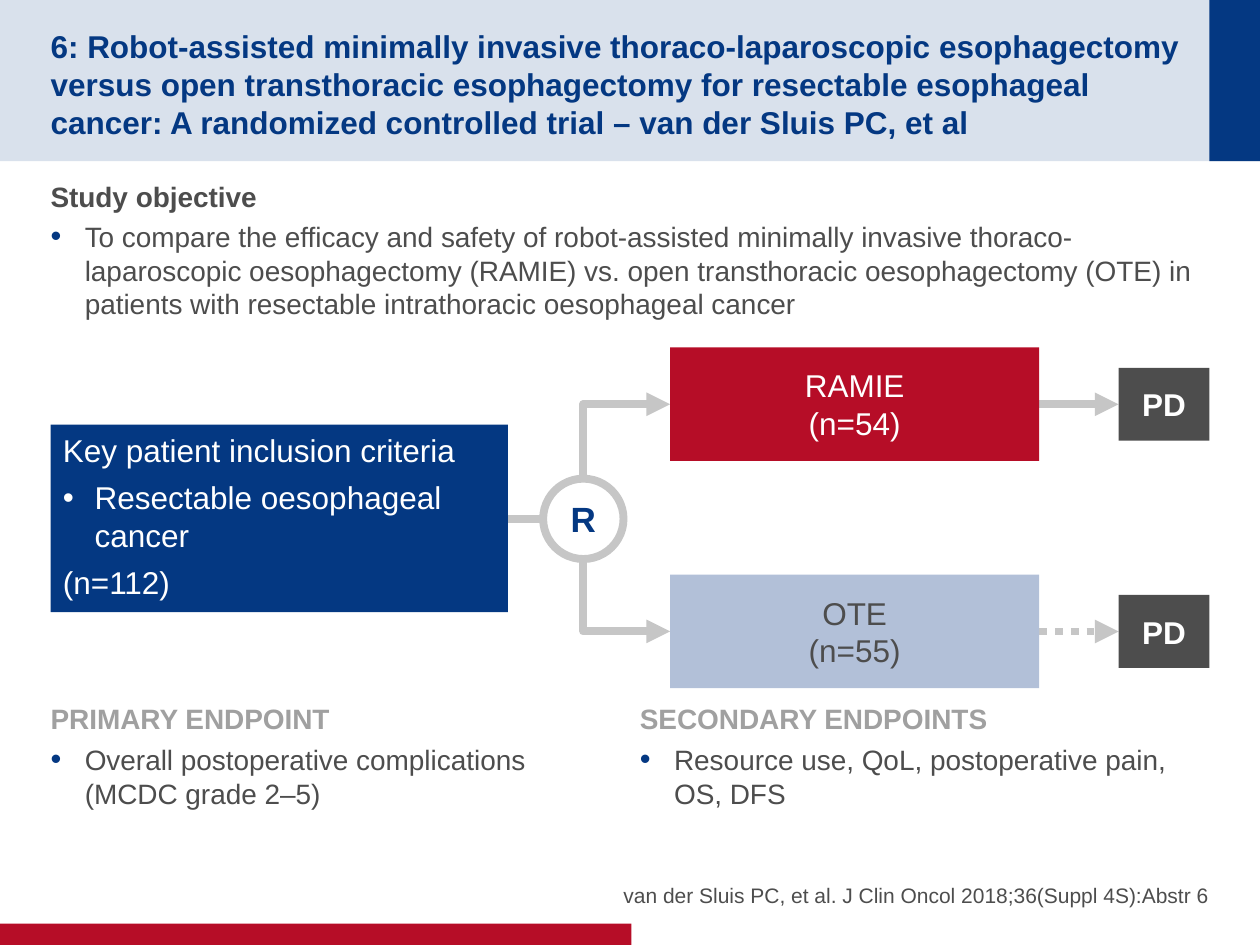
import pptx
import pptx.util
import pptx.dml.color
import pptx.enum.dml
import pptx.enum.shapes
import pptx.enum.text
import pptx.oxml
import pptx.oxml.ns
from lxml import etree

Cm, Pt = pptx.util.Cm, pptx.util.Pt
Kind = pptx.enum.shapes.MSO_SHAPE
Join = pptx.enum.shapes.MSO_CONNECTOR
Align = pptx.enum.text.PP_ALIGN
Anchor = pptx.enum.text.MSO_ANCHOR
qn = pptx.oxml.ns.qn

NAVY, RED, DARK, WHITE = "043882", "B60D27", "4D4D4D", "FFFFFF"
PALE, LINE, GREY = "B2C0D8", "C6C6C6", "A0A0A0"


def paint(target, color):
    target.rgb = pptx.dml.color.RGBColor.from_string(color)


def add(node, tag, **attrs):
    return etree.SubElement(node, qn(tag), **attrs)


class Deck:
    font = "Arial"
    width = 4.5

    def __init__(self):
        self.prs = pptx.Presentation()
        self.prs.slide_width, self.prs.slide_height = Cm(25.4), Cm(19.05)
        self.slide = self.prs.slides.add_slide(self.prs.slide_layouts[6])

    def fill(self, frame, paras, size, color, pads, anchor, wrap=True):
        """Each paragraph is a dict: text, plus bold, color, bullet, indent, align, after."""
        frame.word_wrap = wrap
        frame.vertical_anchor = anchor
        (frame.margin_left, frame.margin_top,
         frame.margin_right, frame.margin_bottom) = [Cm(p) for p in pads]
        for i, item in enumerate(paras):
            para = frame.paragraphs[0] if i == 0 else frame.add_paragraph()
            para.alignment = item.get("align", Align.LEFT)
            para.space_after = Pt(item.get("after", 0))
            if "bullet" in item:
                self.bullet(para, item["bullet"], item["indent"])
            run = para.add_run()
            run.text = item["text"]
            run.font.name, run.font.size = self.font, Pt(size)
            run.font.bold = item.get("bold", False)
            paint(run.font.color, item.get("color", color))

    def bullet(self, para, color, indent):
        props = para._p.get_or_add_pPr()
        props.set("marL", str(Cm(indent)))
        props.set("indent", str(-Cm(indent)))
        add(add(props, "a:buClr"), "a:srgbClr", val=color)
        add(props, "a:buSzPct", val="110000" if color == NAVY else "100000")
        add(props, "a:buFont", typeface=self.font)
        add(props, "a:buChar", char="•")

    def text(self, box, paras, size, color, pads=(0, 0.13, 0, 0.13), anchor=Anchor.TOP):
        shape = self.slide.shapes.add_textbox(*[Cm(v) for v in box])
        self.fill(shape.text_frame, paras, size, color, pads, anchor)

    def shape(self, box, color=None, kind=Kind.RECTANGLE, alpha=None):
        shape = self.slide.shapes.add_shape(kind, *[Cm(v) for v in box])
        shape.shadow.inherit = False
        shape.line.fill.background()
        if color:
            shape.fill.solid()
            paint(shape.fill.fore_color, color)
        else:
            shape.fill.background()
        if alpha:
            tone = shape._element.spPr.find(".//" + qn("a:srgbClr"))
            add(tone, "a:alpha", val=str(alpha * 1000))
        return shape

    def label(self, box, color, lines, ink=WHITE, bold=False):
        paras = [dict(text=t, bold=bold, align=Align.CENTER) for t in lines]
        frame = self.shape(box, color).text_frame
        self.fill(frame, paras, 18, ink, (0.25, 0, 0.25, 0), Anchor.MIDDLE)

    def link(self, start, end, tip=None, dots=False, bent=False):
        kind = Join.ELBOW if bent else Join.STRAIGHT
        line = self.slide.shapes.add_connector(kind, *[Cm(v) for v in start + end])
        paint(line.line.color, LINE)
        line.line.width = Pt(self.width)
        if dots:
            line.line.dash_style = pptx.enum.dml.MSO_LINE.ROUND_DOT
        props = line._element.spPr
        if bent:
            props.find(qn("a:prstGeom")).set("prst", "bentConnector2")
        if tip:
            add(props.find(qn("a:ln")), tip, type="triangle")
        add(props, "a:effectLst")


def points(head, body, tone):
    """A bold heading and one bulleted paragraph."""
    return [dict(text=head, bold=True, color=tone, after=4),
            dict(text=body, bullet=NAVY, indent=0.69, after=4)]


def main():
    deck = Deck()
    left, right = 1.02, 24.38

    # Bands
    deck.shape((0, 0, 25.4, 3.25), NAVY, alpha=15)
    deck.shape((right, 0, 1.02, 3.25), NAVY)
    deck.shape((0, 18.62, 12.73, 0.43), RED)

    # Title, objective and source
    deck.text((left, 0.51, 22.89, 2.24), [dict(
        text="6: Robot-assisted minimally invasive thoraco-laparoscopic esophagectomy "
             "versus open transthoracic esophagectomy for resectable esophageal cancer: "
             "A randomized controlled trial – van der Sluis PC, et al", bold=True)],
        18, NAVY, (0, 0.13, 0, 0), Anchor.MIDDLE)
    deck.text((left, 3.48, right - left, 13.18), points(
        "Study objective",
        "To compare the efficacy and safety of robot-assisted minimally invasive "
        "thoraco-laparoscopic oesophagectomy (RAMIE) vs. open transthoracic "
        "oesophagectomy (OTE) in patients with resectable intrathoracic "
        "oesophageal cancer", DARK), 16, DARK)
    deck.text((12.5, 16.94, 11.88, 1.35), [dict(
        text="van der Sluis PC, et al. J Clin Oncol 2018;36(Suppl 4S):Abstr 6",
        align=Align.RIGHT, after=4)], 12, DARK, (0, 0, 0, 0), Anchor.BOTTOM)

    # Endpoints
    ends = [
        (left, "PRIMARY ENDPOINT", "Overall postoperative complications (MCDC grade 2–5)"),
        (12.9, "SECONDARY ENDPOINTS", "Resource use, QoL, postoperative pain, OS, DFS"),
    ]
    for x, head, body in ends:
        deck.text((x, 14.02, 11.48, 1.93), points(head, body, GREY), 16, DARK)

    # Patients
    crit = deck.shape((left, 8.56, 9.22, 3.78), NAVY)
    deck.fill(crit.text_frame, [
        dict(text="Key patient inclusion criteria", after=5.4),
        dict(text="Resectable oesophageal cancer", bullet=WHITE, indent=0.64, after=5.4),
        dict(text="(n=112)", after=5.4),
    ], 18, WHITE, (0.25, 0.13, 0.25, 0.13), Anchor.TOP)

    # Randomisation
    mid_x, mid_y, rad = 11.76, 10.46, 0.81
    deck.link((left + 9.22, mid_y), (mid_x - rad, mid_y))
    ring = deck.shape((mid_x - rad, mid_y - rad, 2 * rad, 2 * rad), kind=Kind.OVAL)
    paint(ring.line.color, LINE)
    ring.line.width = Pt(deck.width)
    deck.fill(ring.text_frame, [dict(text="R", bold=True, align=Align.CENTER)],
              20, NAVY, (0.25, 0.13, 0.25, 0.13), Anchor.MIDDLE, wrap=False)

    # Arms: each elbow runs from the box back to the ring
    box_x, box_w, box_h = 13.51, 7.44, 2.29
    end_w, end_h = 1.83, 1.47
    arms = [
        (8.15, -rad, RED, WHITE, ["RAMIE", "(n=54)"], False),
        (12.73, rad, PALE, DARK, ["OTE", "(n=55)"], True),
    ]
    for y, edge, color, ink, lines, dots in arms:
        deck.link((box_x, y), (mid_x, mid_y + edge), "a:headEnd", bent=True)
        deck.link((box_x + box_w, y), (right - end_w, y), "a:tailEnd", dots)
        deck.label((box_x, y - box_h / 2, box_w, box_h), color, lines, ink)
        deck.label((right - end_w, y - end_h / 2, end_w, end_h), DARK, ["PD"], bold=True)

    deck.prs.save("out.pptx")


if __name__ == "__main__":
    main()
